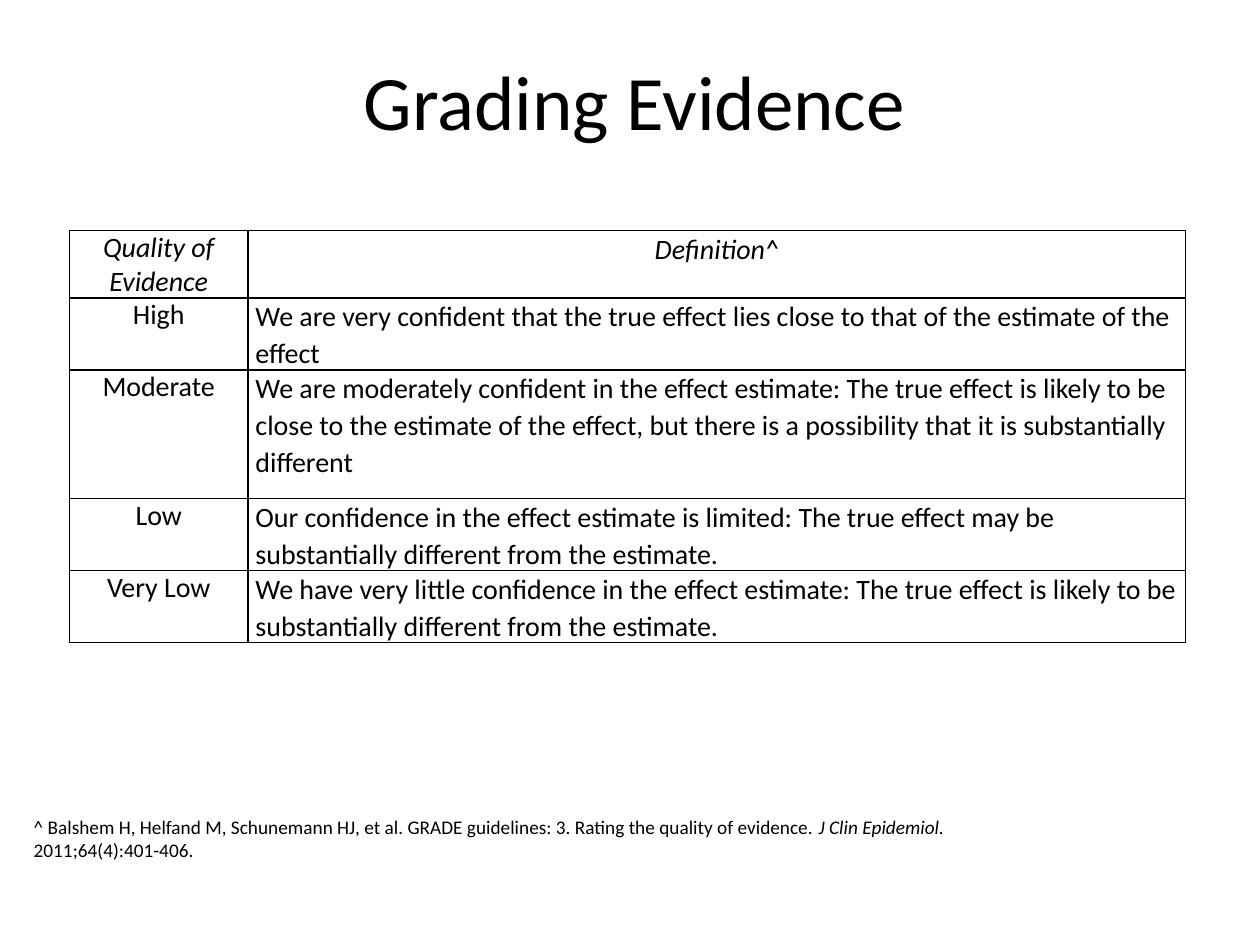
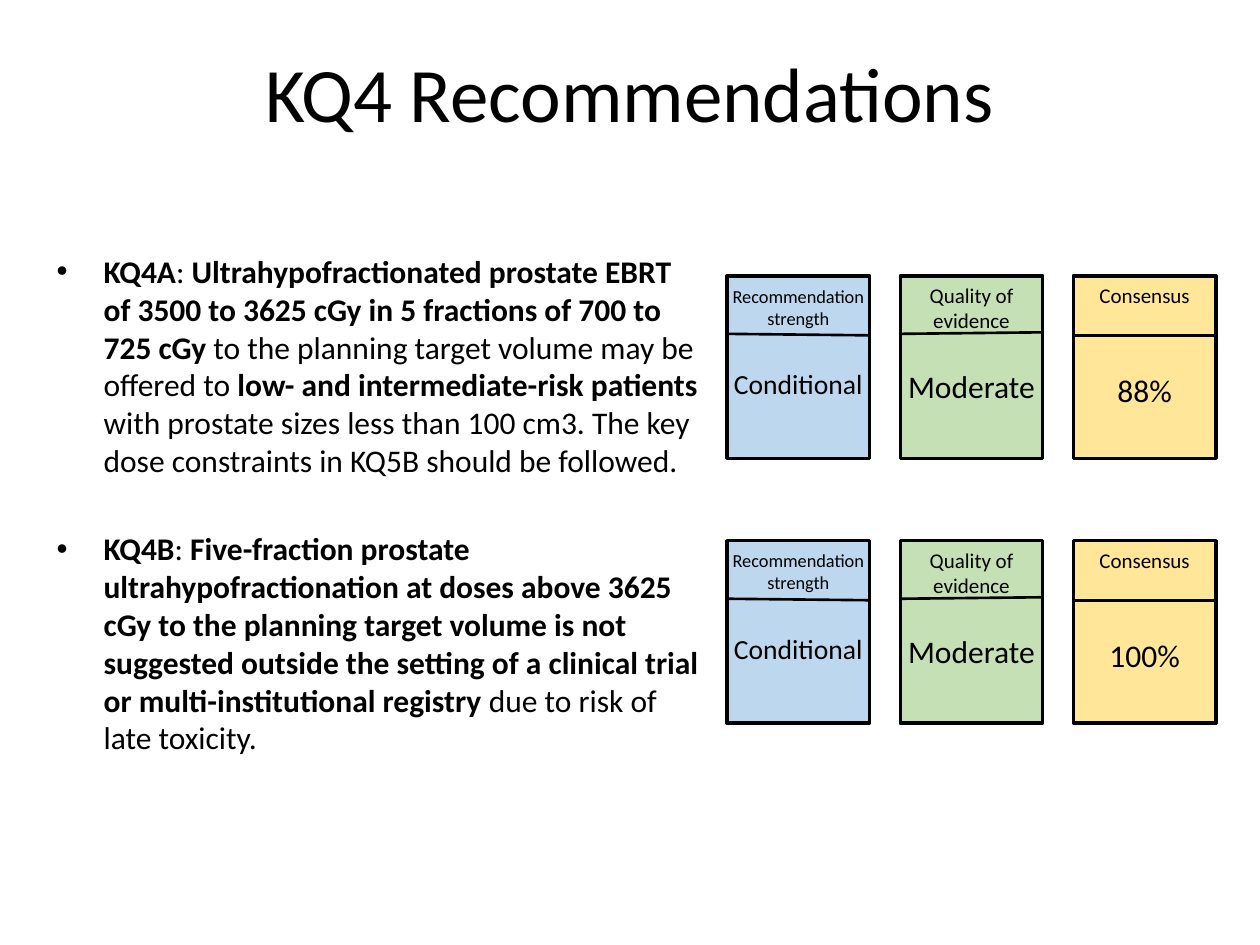
from lxml import etree
from pptx import Presentation
from pptx.dml.color import RGBColor
from pptx.enum.shapes import MSO_CONNECTOR, MSO_SHAPE
from pptx.enum.text import MSO_ANCHOR, MSO_AUTO_SIZE, PP_ALIGN
from pptx.oxml.ns import qn
from pptx.util import Cm, Pt

LEFT, CENTER = PP_ALIGN.LEFT, PP_ALIGN.CENTER
TOP, NO_AUTOFIT = MSO_ANCHOR.TOP, MSO_AUTO_SIZE.NONE
RECTANGLE, STRAIGHT = MSO_SHAPE.RECTANGLE, MSO_CONNECTOR.STRAIGHT
TITLE_ONLY = 5

COLORS = {
    "ink": "000000",
    "strength": "BDD7EE",
    "quality": "C5E0B4",
    "consensus": "FFE699",
}
FONT = "Calibri"
DEFAULT_INSETS = (0.25, 0.13)

CARD_LEFT, CARD_STEP, CARD_WIDTH, CARD_HEIGHT = 14.66, 3.49, 2.87, 3.68
# colour, label, label size, label insets, rule start and end, value top, value size
CARDS = [
    ("strength", "Recommendation strength", 10.5, (0.1, 0.18), (1.17, 1.2), 1.71, 15.8),
    ("quality", "Quality of evidence", 12, DEFAULT_INSETS, (1.17, 1.14), 1.71, 18),
    ("consensus", "Consensus", 12, DEFAULT_INSETS, (1.2, 1.2), 1.79, 18),
]

GRADES = [
    ("Quality of Evidence", "Definition^"),
    ("High", "We are very confident that the true effect lies close to that of the "
             "estimate of the effect"),
    ("Moderate", "We are moderately confident in the effect estimate: The true effect is "
                 "likely to be close to the estimate of the effect, but there is a "
                 "possibility that it is substantially different"),
    ("Low", "Our confidence in the effect estimate is limited: The true effect may be "
            "substantially different from the estimate."),
    ("Very Low", "We have very little confidence in the effect estimate: The true effect "
                 "is likely to be substantially different from the estimate."),
]

# Every second run of a recommendation is regular, the others are bold.
RECOMMENDATIONS = [
    ["KQ4A", ": ",
     "Ultrahypofractionated prostate EBRT of 3500 to 3625 cGy in 5 fractions of 700 to "
     "725 cGy ",
     "to the planning target volume may be offered to ",
     "low- and intermediate-risk patients",
     " with prostate sizes less than 100 cm3. The key dose constraints in KQ5B should be "
     "followed."],
    ["KQ4B", ": ",
     "Five-fraction prostate ultrahypofractionation at doses above 3625 cGy to the "
     "planning target volume is not suggested outside the setting of a clinical trial or "
     "multi-institutional registry ",
     "due to risk of late toxicity."],
]


def rgb(name):
    return RGBColor.from_string(COLORS[name])


class Deck:
    def __init__(self):
        self.prs = Presentation()
        self.prs.slide_width, self.prs.slide_height = Cm(25.4), Cm(19.05)
        self.slide = None

    def new_slide(self, title, left, top, width, height):
        layout = self.prs.slide_layouts[TITLE_ONLY]
        self.slide = self.prs.slides.add_slide(layout)
        heading = self.slide.shapes.title
        heading.left, heading.top = Cm(left), Cm(top)
        heading.width, heading.height = Cm(width), Cm(height)
        frame = heading.text_frame
        frame.text = title
        frame.vertical_anchor, frame.auto_size = TOP, NO_AUTOFIT
        self.style(frame.paragraphs[0], 44, CENTER)

    def style(self, paragraph, size, align=LEFT, italic=False):
        paragraph.alignment = align
        font = paragraph.font
        font.name, font.size, font.italic = FONT, Pt(size), italic
        font.color.rgb = rgb("ink")

    def frame(self, shapes, left, top, width, height, insets=DEFAULT_INSETS):
        """Add an empty wrapping text box and return its text frame."""
        box = shapes.add_textbox(Cm(left), Cm(top), Cm(width), Cm(height))
        frame = box.text_frame
        frame.word_wrap = True
        frame.margin_left = frame.margin_right = Cm(insets[0])
        frame.margin_top = frame.margin_bottom = Cm(insets[1])
        return frame

    def centered_text(self, shapes, text, size, *place, insets):
        frame = self.frame(shapes, *place, insets=insets)
        frame.text = text
        self.style(frame.paragraphs[0], size, CENTER)

    def footnote(self, before, journal, after, *place):
        paragraph = self.frame(self.slide.shapes, *place).paragraphs[0]
        for text in (before, journal, after):
            run = paragraph.add_run()
            run.text = text
            run.font.italic = text == journal
        self.style(paragraph, 11)

    def bullets(self, items, size, gap, *place):
        frame = self.frame(self.slide.shapes, *place)
        for i, item in enumerate(items):
            paragraph = frame.add_paragraph() if i else frame.paragraphs[0]
            if i:
                paragraph.space_before = Pt(gap)
            props = paragraph._p.get_or_add_pPr()
            props.set("marL", str(Cm(0.95)))
            props.set("indent", str(-Cm(0.95)))
            etree.SubElement(props, qn("a:buFont"), typeface="Arial")
            etree.SubElement(props, qn("a:buChar"), char="•")
            self.style(paragraph, size)
            for j, text in enumerate(item):
                run = paragraph.add_run()
                run.text = text
                run.font.bold = j % 2 == 0

    def border(self, cell):
        props = cell._tc.get_or_add_tcPr()
        for position, side in enumerate(("lnL", "lnR", "lnT", "lnB")):
            line = etree.Element(qn(f"a:{side}"), w=str(Pt(1)))
            fill = etree.SubElement(line, qn("a:solidFill"))
            etree.SubElement(fill, qn("a:srgbClr"), val=COLORS["ink"])
            props.insert(position, line)

    def table(self, rows, left, top, widths, heights):
        table = self.slide.shapes.add_table(
            len(rows), len(widths), Cm(left), Cm(top),
            Cm(sum(widths)), Cm(sum(heights))).table
        table.first_row = table.horz_banding = False
        for column, width in zip(table.columns, widths):
            column.width = Cm(width)
        for r, (row, height) in enumerate(zip(rows, heights)):
            table.rows[r].height = Cm(height)
            for c, text in enumerate(row):
                cell = table.cell(r, c)
                cell.text = text
                cell.margin_left = cell.margin_right = Cm(0.15)
                cell.margin_top = cell.margin_bottom = 0
                cell.fill.background()
                self.border(cell)
                paragraph = cell.text_frame.paragraphs[0]
                header = r == 0
                if c:
                    paragraph.line_spacing = 1.07
                self.style(paragraph, 16, LEFT if c and not header else CENTER, header)

    def panel(self, shapes, color, left, top, width, height):
        panel = shapes.add_shape(RECTANGLE, Cm(left), Cm(top), Cm(width), Cm(height))
        panel.shadow.inherit = False
        panel.fill.solid()
        panel.fill.fore_color.rgb = rgb(color)
        panel.line.color.rgb = rgb("ink")
        panel.line.width = Pt(2)

    def rule(self, shapes, x1, y1, x2, y2):
        rule = shapes.add_connector(STRAIGHT, Cm(x1), Cm(y1), Cm(x2), Cm(y2))
        rule.line.color.rgb = rgb("ink")
        rule.line.width = Pt(1.5)
        etree.SubElement(rule._element.spPr, qn("a:effectLst"))

    def rating_cards(self, top, values):
        """Add one grouped row of cards, a label above and a value below each rule."""
        shapes = self.slide.shapes.add_group_shape().shapes
        for i, (card, value) in enumerate(zip(CARDS, values)):
            color, label, label_size, insets, (start, end), value_top, value_size = card
            left = CARD_LEFT + i * CARD_STEP
            self.panel(shapes, color, left, top, CARD_WIDTH, CARD_HEIGHT)
            self.rule(shapes, left, top + start, left + CARD_WIDTH, top + end)
            self.centered_text(shapes, label, label_size, left, top, CARD_WIDTH, 1.27,
                               insets=insets)
            self.centered_text(shapes, value, value_size, left, top + value_top,
                               CARD_WIDTH, 1, insets=(0.1, 0.13))


def main():
    deck = Deck()

    deck.new_slide("Grading Evidence", 1.68, 0.96, 22.23, 2.49)
    deck.footnote(
        "^ Balshem H, Helfand M, Schunemann HJ, et al. GRADE guidelines: 3. Rating the "
        "quality of evidence. ", "J Clin Epidemiol. ", "2011;64(4):401-406.",
        0.43, 16.31, 20.27, 1.19)
    deck.table(GRADES, 1.4, 4.65, (3.6, 18.9), (1.27, 1.27, 2.6, 1.27, 1.07))

    deck.new_slide("KQ4 Recommendations", 1.27, 0.8, 22.86, 3.18)
    deck.bullets(RECOMMENDATIONS, 18, 29, 0.89, 4.95, 13.51, 9.75)
    deck.rating_cards(5.56, ("Conditional", "Moderate", "88%"))
    deck.rating_cards(10.9, ("Conditional", "Moderate", "100%"))

    deck.prs.save("out.pptx")


if __name__ == "__main__":
    main()
